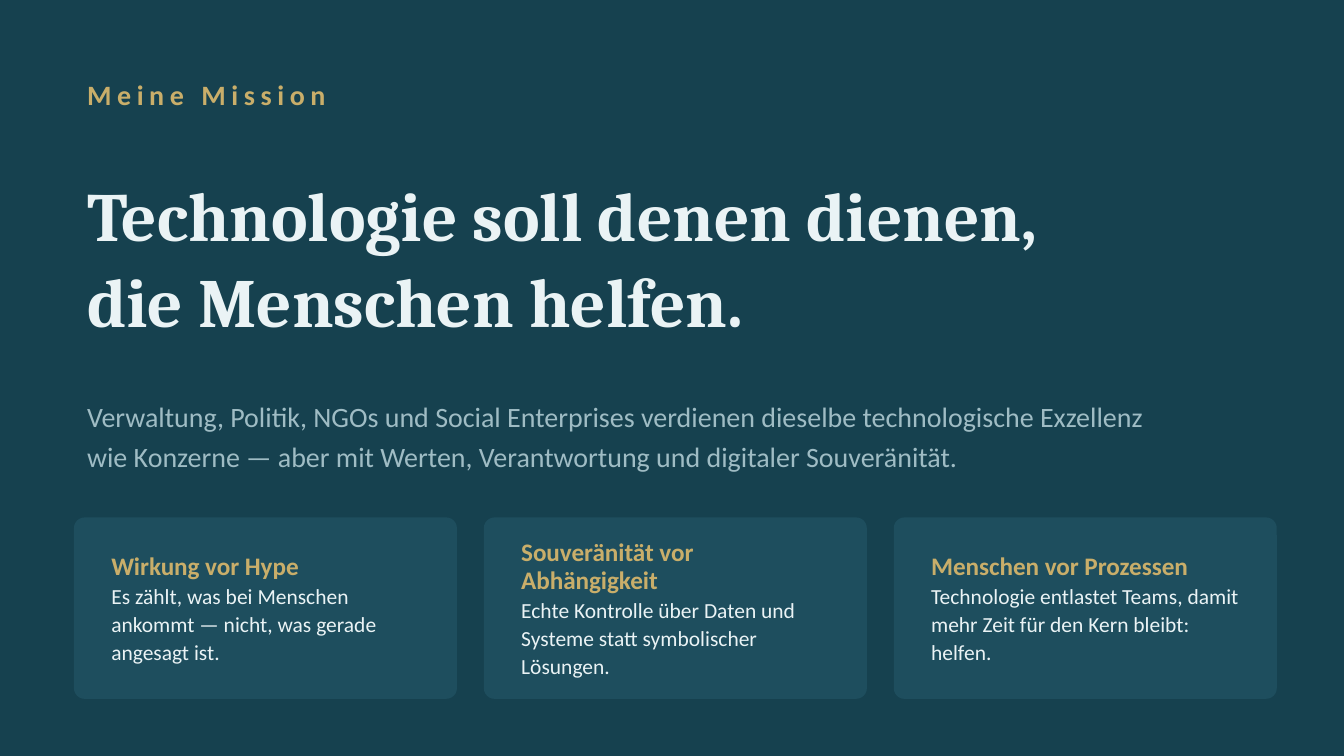
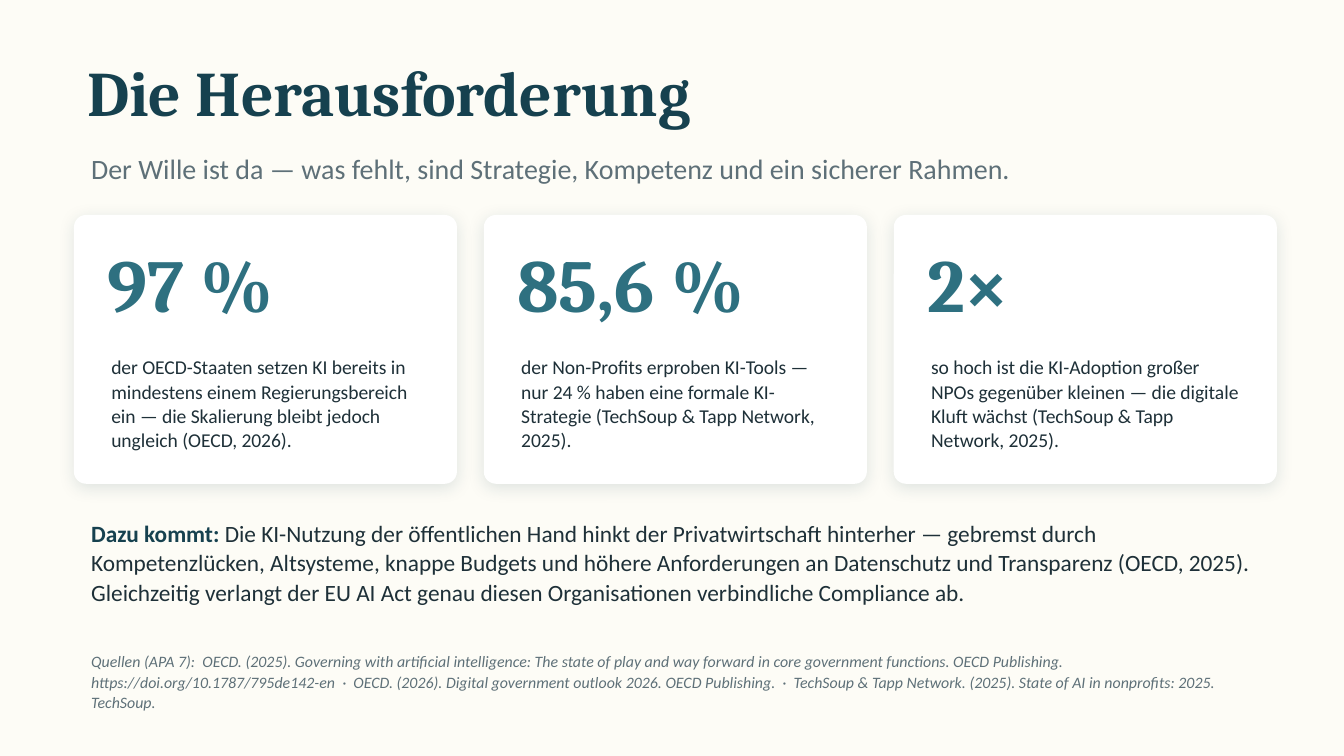
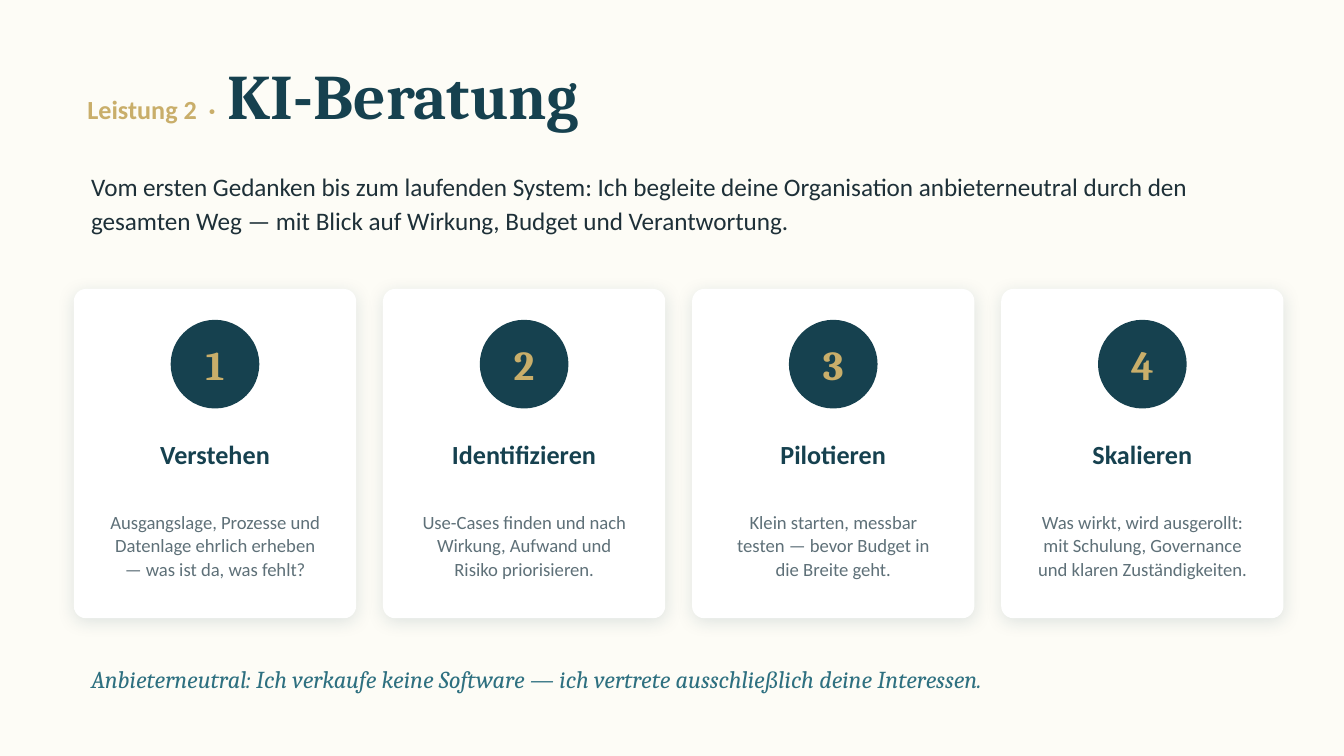
from dataclasses import dataclass

from lxml import etree
from pptx import Presentation
from pptx import util as u
from pptx.dml.color import RGBColor
from pptx.enum import shapes, text
from pptx.oxml.ns import qn

PETROL = RGBColor(0x16, 0x41, 0x4F)
PANEL = RGBColor(0x1E, 0x4E, 0x5E)
TEAL = RGBColor(0x2E, 0x70, 0x80)
GOLD = RGBColor(0xC9, 0xAE, 0x6A)
ICE = RGBColor(0xEA, 0xF3, 0xF5)
MIST = RGBColor(0x9F, 0xBC, 0xC4)
INK = RGBColor(0x1E, 0x30, 0x38)
SLATE = RGBColor(0x5E, 0x70, 0x78)
CREAM = RGBColor(0xFD, 0xFC, 0xF6)
WHITE = RGBColor(0xFF, 0xFF, 0xFF)

SANS, SERIF = "Calibri", "Cambria"
COLUMNS, ROWS = 100, 56.25
CELL = u.Inches(0.1)
MARGIN, INDENT, GAP = 5.5, 5.8, 2
TITLE_ONLY = 5


@dataclass
class Style:
    """Look of a text run."""
    size: float
    color: RGBColor
    font: str = SANS
    bold: bool = False
    italic: bool = False
    tracking: int = 0


HEADING = Style(34, PETROL, SERIF, bold=True)
LEAD = Style(15, SLATE)


def cells(*lengths):
    """Convert grid cells to slide lengths."""
    return [round(length * CELL) for length in lengths]


def add_run(paragraph, words, style):
    """Append one styled run."""
    run = paragraph.add_run()
    run.text = words
    font = run.font
    font.name, font.size = style.font, u.Pt(style.size)
    font.bold, font.italic = style.bold, style.italic
    font.color.rgb = style.color
    if style.tracking:
        run._r.get_or_add_rPr().set("spc", str(style.tracking))


def write(shape, paragraphs, leading=None, centered=False):
    """Fill a shape with paragraphs, each a list of (words, style) runs."""
    frame = shape.text_frame
    frame.word_wrap = True
    frame.auto_size = text.MSO_AUTO_SIZE.NONE
    frame.vertical_anchor = text.MSO_ANCHOR.MIDDLE
    for index, runs in enumerate(paragraphs):
        paragraph = frame.add_paragraph() if index else frame.paragraphs[0]
        paragraph.alignment = text.PP_ALIGN.CENTER if centered else text.PP_ALIGN.LEFT
        if leading:
            paragraph.line_spacing = u.Pt(leading)
        for words, style in runs:
            add_run(paragraph, words, style)


def add_text(slide, box, paragraphs, leading=None, centered=False):
    """Add a text box at a grid box."""
    write(slide.shapes.add_textbox(*cells(*box)), paragraphs, leading, centered)


def add_slide(presentation, background, title_box, title, leading=None):
    """Add a slide with its background and title."""
    slide = presentation.slides.add_slide(presentation.slide_layouts[TITLE_ONLY])
    slide.background.fill.solid()
    slide.background.fill.fore_color.rgb = background
    shape = slide.shapes.title
    shape.left, shape.top, shape.width, shape.height = cells(*title_box)
    write(shape, title, leading)
    return slide


def add_filled(slide, kind, box, color):
    """Add a flat preset shape without outline."""
    shape = slide.shapes.add_shape(kind, *cells(*box))
    shape.shadow.inherit = False
    shape.fill.solid()
    shape.fill.fore_color.rgb = color
    shape.line.fill.background()
    return shape


def add_soft_shadow(shape):
    """Cast a faint shadow straight down."""
    effects = shape._element.spPr.find(qn("a:effectLst"))
    shadow = etree.SubElement(effects, qn("a:outerShdw"), blurRad=str(u.Pt(9)),
                              dist=str(u.Pt(2)), dir="5400000", algn="bl",
                              rotWithShape="0")
    color = etree.SubElement(shadow, qn("a:srgbClr"), val=str(PETROL))
    etree.SubElement(color, qn("a:alpha"), val="13000")


def add_card(slide, box, color, radius, raised=True):
    """Add a rounded card."""
    card = add_filled(slide, shapes.MSO_SHAPE.ROUNDED_RECTANGLE, box, color)
    card.adjustments[0] = radius / min(box[2:])
    if raised:
        add_soft_shadow(card)


def card_row(items, width):
    """Yield the left edge of each card in a row with its item."""
    for index, item in enumerate(items):
        yield MARGIN + index * (width + GAP), item


def build_mission(presentation):
    """Mission statement with three principles."""
    claim = Style(37, ICE, SERIF, bold=True)
    slide = add_slide(presentation, PETROL, (MARGIN, 10.5, 89, 17),
                      [[("Technologie soll denen dienen,", claim)],
                       [("die Menschen helfen.", claim)]], 46)
    add_text(slide, (MARGIN, 4.5, 50, 5),
             [[("Meine Mission", Style(15, GOLD, bold=True, tracking=300))]])
    add_text(slide, (MARGIN, 28.5, 82, 7.5),
             [[("Verwaltung, Politik, NGOs und Social Enterprises verdienen dieselbe "
                "technologische Exzellenz wie Konzerne — aber mit Werten, Verantwortung "
                "und digitaler Souveränität.", Style(15, MIST))]], 21)
    principles = [
        ("Wirkung vor Hype",
         "Es zählt, was bei Menschen ankommt — nicht, was gerade angesagt ist."),
        ("Souveränität vor Abhängigkeit",
         "Echte Kontrolle über Daten und Systeme statt symbolischer Lösungen."),
        ("Menschen vor Prozessen",
         "Technologie entlastet Teams, damit mehr Zeit für den Kern bleibt: helfen."),
    ]
    for left, (name, detail) in card_row(principles, 28.5):
        add_card(slide, (left, 38.5, 28.5, 13.5), PANEL, 0.8, raised=False)
        add_text(slide, (left + 1.8, 39.8, 25, 11),
                 [[(name, Style(13.5, GOLD, bold=True))],
                  [(detail, Style(11.5, ICE))]], 15)


def build_challenge(presentation):
    """Three key figures with context and sources."""
    slide = add_slide(presentation, CREAM, (MARGIN, 3.5, 70, 6.5),
                      [[("Die Herausforderung", HEADING)]])
    add_text(slide, (INDENT, 10.5, 88, 4),
             [[("Der Wille ist da — was fehlt, sind Strategie, Kompetenz und ein "
                "sicherer Rahmen.", LEAD)]])
    figures = [
        ("97 %", "der OECD-Staaten setzen KI bereits in mindestens einem "
         "Regierungsbereich ein — die Skalierung bleibt jedoch ungleich (OECD, 2026)."),
        ("85,6 %", "der Non-Profits erproben KI-Tools — nur 24 % haben eine formale "
         "KI-Strategie (TechSoup & Tapp Network, 2025)."),
        ("2×", "so hoch ist die KI-Adoption großer NPOs gegenüber kleinen — die "
         "digitale Kluft wächst (TechSoup & Tapp Network, 2025)."),
    ]
    for left, (figure, meaning) in card_row(figures, 28.5):
        add_card(slide, (left, 16, 28.5, 20), WHITE, 0.9)
        add_text(slide, (left + 1.5, 17.5, 25.5, 7),
                 [[(figure, Style(40, TEAL, SERIF, bold=True))]])
        add_text(slide, (left + 1.8, 25, 25, 10), [[(meaning, Style(10.5, INK))]], 13)
    add_text(slide, (INDENT, 37.8, 88.5, 8),
             [[("Dazu kommt: ", Style(12.5, PETROL, bold=True)),
               ("Die KI-Nutzung der öffentlichen Hand hinkt der Privatwirtschaft "
                "hinterher — gebremst durch Kompetenzlücken, Altsysteme, knappe Budgets "
                "und höhere Anforderungen an Datenschutz und Transparenz (OECD, 2025). "
                "Gleichzeitig verlangt der EU AI Act genau diesen Organisationen "
                "verbindliche Compliance ab.", Style(12.5, INK))]], 16)
    add_text(slide, (INDENT, 47.2, 88.5, 7),
             [[("Quellen (APA 7):  OECD. (2025). Governing with artificial intelligence: "
                "The state of play and way forward in core government functions. OECD "
                "Publishing. https://doi.org/10.1787/795de142-en  ·  OECD. (2026). Digital "
                "government outlook 2026. OECD Publishing.  ·  TechSoup & Tapp Network. "
                "(2025). State of AI in nonprofits: 2025. TechSoup.",
                Style(8.5, SLATE, italic=True))]], 11)


def build_consulting(presentation):
    """Four numbered consulting steps."""
    slide = add_slide(presentation, CREAM, (MARGIN, 3.5, 80, 7),
                      [[("Leistung 2  ·  ", Style(14, GOLD, bold=True)),
                        ("KI-Beratung", HEADING)]])
    add_text(slide, (INDENT, 11.5, 87, 7),
             [[("Vom ersten Gedanken bis zum laufenden System: Ich begleite deine "
                "Organisation anbieterneutral durch den gesamten Weg — mit Blick auf "
                "Wirkung, Budget und Verantwortung.", Style(13.5, INK))]], 18)
    steps = [
        ("Verstehen",
         "Ausgangslage, Prozesse und Datenlage ehrlich erheben — was ist da, was fehlt?"),
        ("Identifizieren",
         "Use-Cases finden und nach Wirkung, Aufwand und Risiko priorisieren."),
        ("Pilotieren",
         "Klein starten, messbar testen — bevor Budget in die Breite geht."),
        ("Skalieren",
         "Was wirkt, wird ausgerollt: mit Schulung, Governance und klaren Zuständigkeiten."),
    ]
    for number, (left, (name, detail)) in enumerate(card_row(steps, 21), 1):
        add_card(slide, (left, 21.5, 21, 24.5), WHITE, 0.9)
        badge = add_filled(slide, shapes.MSO_SHAPE.OVAL,
                           (left + 7.2, 23.8, 6.6, 6.6), PETROL)
        frame = badge.text_frame
        frame.margin_left = frame.margin_right = frame.margin_top = frame.margin_bottom = 0
        write(badge, [[(str(number), Style(22, GOLD, SERIF, bold=True))]], centered=True)
        add_text(slide, (left + 0.5, 31.8, 20, 4),
                 [[(name, Style(14, PETROL, bold=True))]], centered=True)
        add_text(slide, (left + 1.4, 35.8, 18.2, 9.5),
                 [[(detail, Style(10, SLATE))]], 12.5, centered=True)
    add_text(slide, (INDENT, 48.5, 88, 4),
             [[("Anbieterneutral: Ich verkaufe keine Software — ich vertrete "
                "ausschließlich deine Interessen.", Style(13, TEAL, SERIF, italic=True))]])


def main():
    """Build and save the presentation."""
    presentation = Presentation()
    presentation.slide_width, presentation.slide_height = cells(COLUMNS, ROWS)
    build_mission(presentation)
    build_challenge(presentation)
    build_consulting(presentation)
    presentation.save("out.pptx")


if __name__ == "__main__":
    main()
